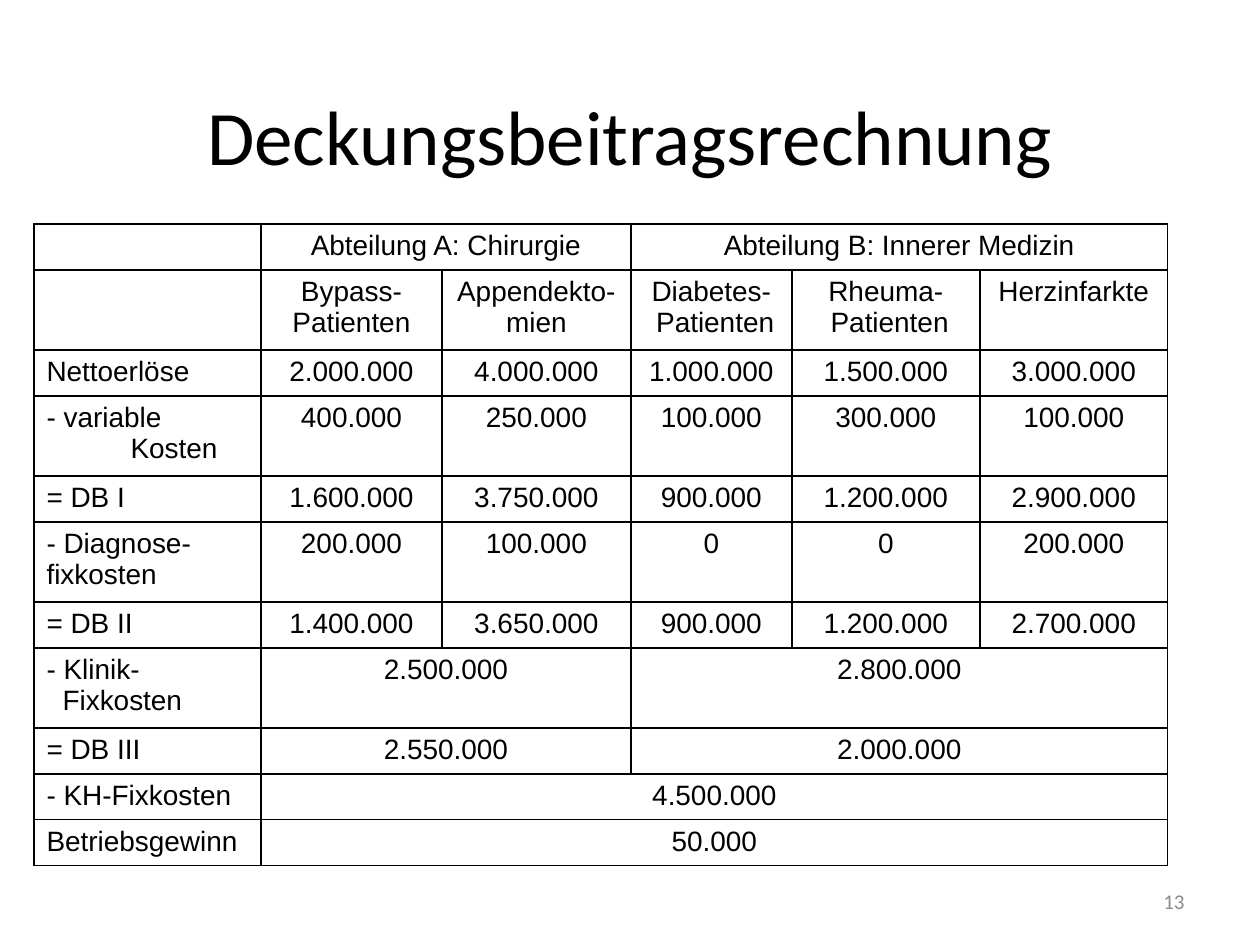
from lxml.etree import SubElement
from pptx import Presentation
from pptx.dml.color import RGBColor
from pptx.enum.text import MSO_ANCHOR, PP_ALIGN
from pptx.oxml.ns import qn
from pptx.util import Pt

PX = 914400 // 126
COLORS = {"text": "000000", "line": "000000", "cell": "FFFFFF", "number": "8C8C8C"}

TITLE = "Deckungsbeitragsrechnung"
PAGE_NUMBER = "13"
COL_WIDTHS = [227, 181, 189, 161, 188, 188]
ONE_LINE, TWO_LINES = 46, 80
HANGING = 84
FIXKOSTEN_INDENT = 16

# Each row: height, label, then (text, columns spanned) or plain text for one column
ROWS = [
    (ONE_LINE, "", [("Abteilung A: Chirurgie", 2), ("Abteilung B: Innerer Medizin", 3)]),
    (TWO_LINES, "", ["Bypass-\nPatienten", "Appendekto-\nmien", "Diabetes-\n Patienten",
                     "Rheuma-\n Patienten", "Herzinfarkte"]),
    (ONE_LINE, "Nettoerlöse",
     ["2.000.000", "4.000.000", "1.000.000", "1.500.000", "3.000.000"]),
    (TWO_LINES, "- variable Kosten",
     ["400.000", "250.000", "100.000", "300.000", "100.000"]),
    (ONE_LINE, "= DB I",
     ["1.600.000", "3.750.000", "900.000", "1.200.000", "2.900.000"]),
    (TWO_LINES, "- Diagnose-\nfixkosten", ["200.000", "100.000", "0", "0", "200.000"]),
    (ONE_LINE, "= DB II",
     ["1.400.000", "3.650.000", "900.000", "1.200.000", "2.700.000"]),
    (TWO_LINES, "- Klinik-\nFixkosten", [("2.500.000", 2), ("2.800.000", 3)]),
    (ONE_LINE, "= DB III", [("2.550.000", 2), ("2.000.000", 3)]),
    (ONE_LINE, "- KH-Fixkosten", [("4.500.000", 5)]),
    (ONE_LINE, "Betriebsgewinn", [("50.000", 5)]),
]


def place(sp, left, top, width, height):
    sp.left, sp.top, sp.width, sp.height = (v * PX for v in (left, top, width, height))


def set_font(p, name, size, color):
    p.font.name, p.font.size = name, Pt(size)
    p.font.color.rgb = RGBColor.from_string(COLORS[color])


def set_line(sp, text, align, size, color):
    """Fill a shape with one vertically centred line of Calibri."""
    tf = sp.text_frame
    tf.word_wrap = True
    tf.vertical_anchor = MSO_ANCHOR.MIDDLE
    tf.text = text
    p = tf.paragraphs[0]
    p.alignment = align
    set_font(p, "Calibri", size, color)


def style_cell(cell):
    """Give a cell thin borders on all sides and a plain fill."""
    tc_pr = cell._tc.get_or_add_tcPr()
    for side in ("lnL", "lnR", "lnT", "lnB"):
        ln = SubElement(tc_pr, qn(f"a:{side}"), w=str(Pt(1)))
        fill = SubElement(ln, qn("a:solidFill"))
        SubElement(fill, qn("a:srgbClr"), val=COLORS["line"])
    cell.fill.solid()
    cell.fill.fore_color.rgb = RGBColor.from_string(COLORS["cell"])


def write_cell(cell, text, align):
    cell.text = text
    for p in cell.text_frame.paragraphs:
        p.alignment = align
        set_font(p, "Arial", 16, "text")
        p_pr = p._p.get_or_add_pPr()
        margin, indent = (FIXKOSTEN_INDENT, 0) if p.text == "Fixkosten" else (HANGING, -HANGING)
        p_pr.set("marL", str(margin * PX))
        p_pr.set("indent", str(indent * PX))
        if not p.text:
            SubElement(p._p, qn("a:endParaRPr"), sz="1600")


def add_cost_table(slide):
    heights = [row[0] for row in ROWS]
    frame = slide.shapes.add_table(
        len(ROWS), len(COL_WIDTHS), 34 * PX, 224 * PX,
        sum(COL_WIDTHS) * PX, sum(heights) * PX)
    table = frame.table
    table.first_row = table.horz_banding = False
    for column, width in zip(table.columns, COL_WIDTHS):
        column.width = width * PX
    for r, (height, label, values) in enumerate(ROWS):
        table.rows[r].height = height * PX
        for cell in table.rows[r].cells:
            style_cell(cell)
        write_cell(table.cell(r, 0), label, PP_ALIGN.LEFT)
        c = 1
        for value in values:
            text, span = value if isinstance(value, tuple) else (value, 1)
            cell = table.cell(r, c)
            if span > 1:
                cell.merge(table.cell(r, c + span - 1))
            write_cell(cell, text, PP_ALIGN.CENTER)
            c += span


def main():
    prs = Presentation()
    prs.slide_width, prs.slide_height = 1260 * PX, 945 * PX
    slide = prs.slides.add_slide(prs.slide_layouts[5])
    add_cost_table(slide)

    title = slide.shapes.title
    place(title, 63, 40, 1134, 190)
    set_line(title, TITLE, PP_ALIGN.CENTER, 44, "text")

    number = slide.shapes.add_textbox(0, 0, 0, 0)
    place(number, 903, 876, 294, 50)
    set_line(number, PAGE_NUMBER, PP_ALIGN.RIGHT, 12, "number")
    prs.save("out.pptx")


if __name__ == "__main__":
    main()
